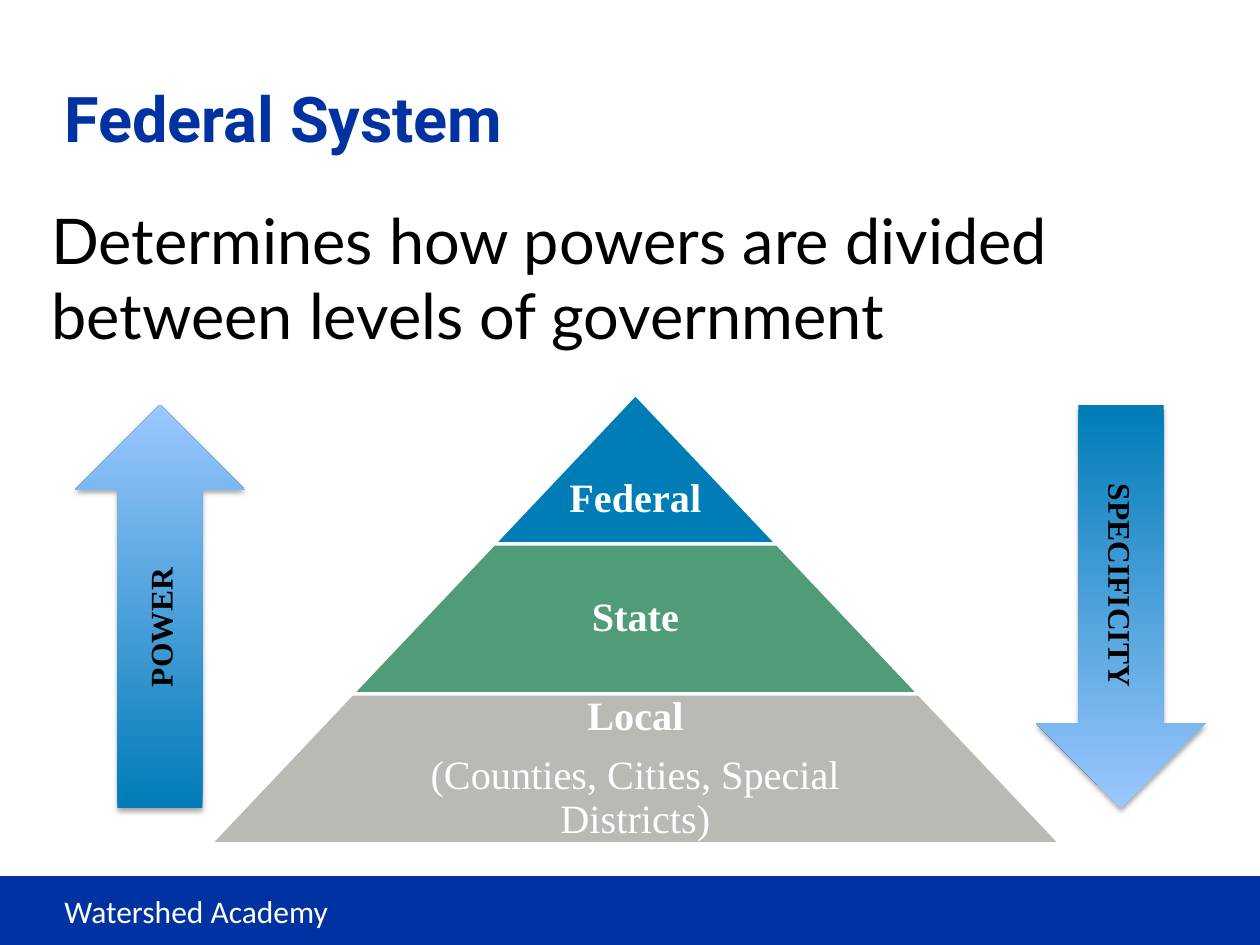
from lxml.etree import SubElement
from pptx import Presentation
from pptx.dml.color import RGBColor
from pptx.enum.shapes import MSO_SHAPE
from pptx.enum.text import MSO_ANCHOR, PP_ALIGN
from pptx.oxml.ns import qn
from pptx.util import Emu, Pt

SCALE = 914400 / 126
COLORS = {
    "navy": "0033A1", "title": "0032A1", "white": "FFFFFF", "black": "000000",
    "blue": "007CB7", "sky": "9CC7FF", "green": "509C79", "gray": "B8BAB3",
}
SERIF = "Times New Roman"


def px(n):
    return Emu(round(n * SCALE))


def rgb(name):
    return RGBColor.from_string(COLORS[name])


def add_run(p, text, font, size, color, bold=False):
    r = p.add_run()
    r.text = text
    r.font.name = font
    r.font.size = Pt(size)
    r.font.bold = bold
    r.font.color.rgb = rgb(color)


def add_shape(s, kind, box):
    sp = s.shapes.add_shape(kind, *map(px, box))
    sp.shadow.inherit = False
    return sp


def add_shadow(sp):
    effects = sp._element.spPr.find(qn("a:effectLst"))
    shadow = SubElement(effects, qn("a:outerShdw"), blurRad=str(Pt(3.1)),
                        dist=str(Pt(1.8)), dir="5400000", rotWithShape="0")
    color = SubElement(shadow, qn("a:srgbClr"), val=COLORS["black"])
    SubElement(color, qn("a:alpha"), val="35000")


def add_text_frame(s, box, anchor=MSO_ANCHOR.TOP):
    tf = s.shapes.add_textbox(*map(px, box)).text_frame
    tf.word_wrap = True
    tf.vertical_anchor = anchor
    return tf


def footer(s, box):
    x, y, w, h = box
    sp = add_shape(s, MSO_SHAPE.RECTANGLE, box)
    sp.fill.solid()
    sp.fill.fore_color.rgb = rgb("navy")
    sp.line.color.rgb = rgb("title")
    sp.line.width = Pt(0.75)
    add_shadow(sp)
    tf = add_text_frame(s, (x + 52, y + 9, 423, 51))
    add_run(tf.paragraphs[0], "Watershed Academy", "Calibri", 18, "white")


def title(s, box):
    tf = add_text_frame(s, box, MSO_ANCHOR.MIDDLE)
    add_run(tf.paragraphs[0], "Federal System", "Roboto", 36, "title", True)


def body(s, box):
    tf = add_text_frame(s, box)
    add_run(tf.paragraphs[0],
            "Determines how powers are divided between levels of government",
            "Lato", 36, "black")


def pyramid(s, box, tiers):
    x, y, w, h = box
    tier_h = h / len(tiers)
    for i, (color, lines, top_inset) in enumerate(tiers):
        tier_w = w * (i + 1) / len(tiers)
        tier_y = y + i * tier_h
        sp = add_shape(s, MSO_SHAPE.TRAPEZOID,
                       (x + (w - tier_w) / 2, tier_y, tier_w, tier_h))
        sp.adjustments[0] = w / (2 * h)
        sp.fill.solid()
        sp.fill.fore_color.rgb = rgb(color)
        sp.line.color.rgb = rgb("white")
        sp.line.width = Pt(2)

        text_w = tier_w * 0.65
        tf = add_text_frame(s, (x + (w - text_w) / 2, tier_y, text_w, tier_h),
                            MSO_ANCHOR.MIDDLE)
        tf.margin_left = tf.margin_right = tf.margin_bottom = px(4)
        tf.margin_top = px(top_inset)
        for j, line in enumerate(lines):
            p = tf.add_paragraph() if j else tf.paragraphs[0]
            p.alignment = PP_ALIGN.CENTER
            p.line_spacing = 0.9
            p.space_after = Pt(9)
            add_run(p, line, SERIF, 23, "white", j == 0)


def arrow(s, box, text, rotation):
    sp = add_shape(s, MSO_SHAPE.UP_ARROW, box)
    sp.rotation = rotation
    sp.fill.gradient()
    sp.fill.gradient_angle = 90
    for stop, color in zip(sp.fill.gradient_stops, ("blue", "sky")):
        stop.color.rgb = rgb(color)
    sp.line.fill.background()
    add_shadow(sp)
    tf = sp.text_frame
    tf.word_wrap = True
    tf.vertical_anchor = MSO_ANCHOR.MIDDLE
    tf._txBody.bodyPr.set("vert", "vert270")
    p = tf.paragraphs[0]
    p.alignment = PP_ALIGN.CENTER
    add_run(p, text, SERIF, 18, "black", True)


def main():
    prs = Presentation()
    prs.slide_width, prs.slide_height = px(1260), px(945)
    s = prs.slides.add_slide(prs.slide_layouts[6])
    footer(s, (0, 877, 1260, 67))
    title(s, (52, 38, 1145, 158))
    body(s, (39, 195, 1145, 649))
    pyramid(s, (210, 394, 851, 450), [
        ("blue", ["Federal"], 66),
        ("green", ["State"], 4),
        ("gray", ["Local", "(Counties, Cities, Special Districts)"], 4),
    ])
    arrow(s, (75, 405, 170, 403), "POWER", 0)
    arrow(s, (1036, 405, 170, 403), "SPECIFICITY", 180)
    prs.save("out.pptx")


if __name__ == "__main__":
    main()
